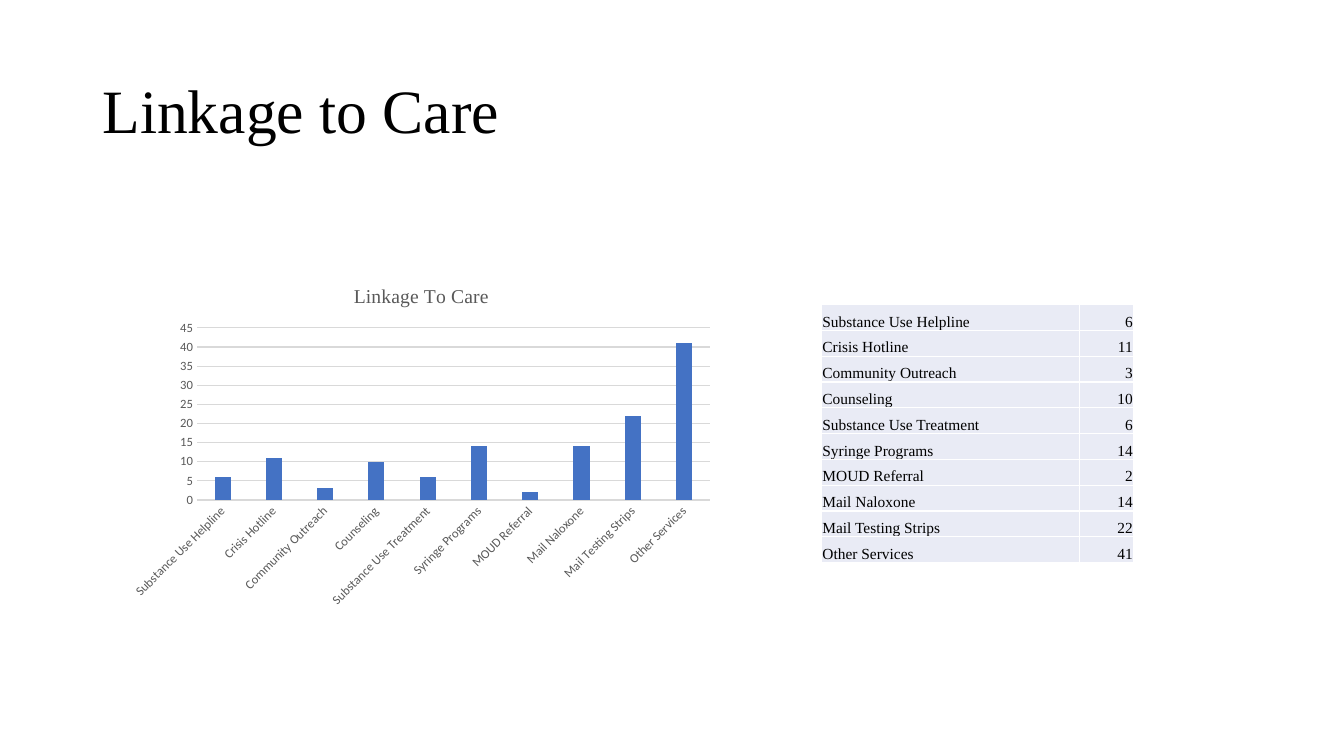
from lxml.etree import SubElement
from pptx import Presentation
from pptx.chart.data import CategoryChartData
from pptx.dml.color import RGBColor
from pptx.enum.chart import XL_CHART_TYPE, XL_TICK_MARK
from pptx.enum.text import MSO_ANCHOR, PP_ALIGN
from pptx.oxml import parse_xml
from pptx.oxml.ns import nsdecls, qn
from pptx.util import Inches, Pt

BLACK = RGBColor(0x00, 0x00, 0x00)
WHITE = RGBColor(0xFF, 0xFF, 0xFF)
GRAY = RGBColor(0x59, 0x59, 0x59)
GRID_GRAY = RGBColor(0xD9, 0xD9, 0xD9)
BLUE = RGBColor(0x44, 0x72, 0xC4)
PALE_BLUE = RGBColor(0xE9, 0xEB, 0xF5)
SERIF = "Times New Roman"
SANS = "Calibri"
SLIDE_WIDTH, SLIDE_HEIGHT = Inches(13.33), Inches(7.5)
SERVICES = {
    "Substance Use Helpline": 6,
    "Crisis Hotline": 11,
    "Community Outreach": 3,
    "Counseling": 10,
    "Substance Use Treatment": 6,
    "Syringe Programs": 14,
    "MOUD Referral": 2,
    "Mail Naloxone": 14,
    "Mail Testing Strips": 22,
    "Other Services": 41,
}


def place(left, top, width, height):
    """Turn percentages of the slide's size into lengths."""
    return (int(SLIDE_WIDTH * left / 100), int(SLIDE_HEIGHT * top / 100),
            int(SLIDE_WIDTH * width / 100), int(SLIDE_HEIGHT * height / 100))


def apply_format(target, values):
    """Set each attribute named in a dict."""
    for name, value in values.items():
        setattr(target, name, value)


def format_font(font, name, size, color):
    """Set typeface, size and colour of a font."""
    apply_format(font, {"name": name, "size": Pt(size), "bold": False})
    font.color.rgb = color


def format_line(line, color):
    """Give a chart line its colour and hairline width."""
    line.color.rgb = color
    line.width = Pt(0.75)


def set_layout(parent, index, modes, percentages):
    """Place a chart element by percentages of the chart's size."""
    for old in parent.findall(qn("c:layout")):
        parent.remove(old)
    layout = parse_xml(f"<c:layout {nsdecls('c')}><c:manualLayout/></c:layout>")
    shares = {name: value / 100 for name, value in percentages.items()}
    for name, value in {**modes, **shares}.items():
        SubElement(layout[0], qn(f"c:{name}")).set("val", str(value))
    parent.insert(index, layout)


def add_title(slide, text, box):
    """Fill and format the title placeholder."""
    title = slide.shapes.title
    apply_format(title, dict(zip(("left", "top", "width", "height"), box)))
    frame = title.text_frame
    apply_format(frame, {"text": text, "vertical_anchor": MSO_ANCHOR.MIDDLE,
                         "word_wrap": True})
    paragraph = frame.paragraphs[0]
    apply_format(paragraph, {"alignment": PP_ALIGN.LEFT, "line_spacing": 0.9})
    format_font(paragraph.runs[0].font, SERIF, 44, BLACK)


def format_chart_title(chart, text):
    """Write the chart's heading."""
    title = chart.chart_title
    title.text_frame.text = text
    format_font(title.text_frame.paragraphs[0].runs[0].font, SERIF, 14, GRAY)
    set_layout(title._element, 1, {"xMode": "edge", "yMode": "edge"},
               {"x": 38.15, "y": 3.6})


def format_axes(chart):
    """Style both axes, the gridlines and the slanted category labels."""
    category_axis, value_axis = chart.category_axis, chart.value_axis
    for axis in (category_axis, value_axis):
        apply_format(axis, {"major_tick_mark": XL_TICK_MARK.NONE,
                            "minor_tick_mark": XL_TICK_MARK.NONE})
        format_font(axis.tick_labels.font, SANS, 9, GRAY)
    format_line(category_axis.format.line, GRID_GRAY)
    category_axis._element.txPr.bodyPr.set("rot", "-2700000")
    apply_format(value_axis, {"minimum_scale": 0, "maximum_scale": 45,
                              "major_unit": 5, "has_major_gridlines": True})
    format_line(value_axis.major_gridlines.format.line, GRID_GRAY)
    value_axis.format.line.fill.background()


def add_column_chart(slide, heading, values, box):
    """Add the column chart of all services."""
    data = CategoryChartData()
    data.categories = list(values)
    data.add_series("Series 1", list(values.values()))
    chart = slide.shapes.add_chart(XL_CHART_TYPE.COLUMN_CLUSTERED, *box, data).chart
    apply_format(chart, {"has_legend": False, "has_title": True})
    format_font(chart.font, SANS, 10, BLACK)
    format_chart_title(chart, heading)
    format_axes(chart)
    plot = chart.plots[0]
    apply_format(plot, {"gap_width": 219, "overlap": -27, "vary_by_categories": False})
    fill = plot.series[0].format.fill
    fill.solid()
    fill.fore_color.rgb = BLUE
    set_layout(chart._chartSpace.chart.plotArea, 0,
               {"layoutTarget": "inner", "xMode": "edge", "yMode": "edge"},
               {"x": 12.65, "y": 17.55, "w": 85.35, "h": 49.65})


def add_borders(cell):
    """Draw thin white borders round a cell."""
    properties = cell._tc.get_or_add_tcPr()
    for index, side in enumerate(("lnL", "lnR", "lnT", "lnB")):
        properties.insert(index, parse_xml(
            f'<a:{side} {nsdecls("a")} w="12700"><a:solidFill>'
            f'<a:srgbClr val="{WHITE}"/></a:solidFill></a:{side}>'))


def fill_cell(cell, text, alignment):
    """Write and format one table cell."""
    apply_format(cell, {"text": text, "vertical_anchor": MSO_ANCHOR.BOTTOM,
                        "margin_left": Pt(0.5), "margin_right": Pt(0.5),
                        "margin_top": Pt(0.5), "margin_bottom": 0})
    cell.fill.solid()
    cell.fill.fore_color.rgb = PALE_BLUE
    paragraph = cell.text_frame.paragraphs[0]
    paragraph.alignment = alignment
    format_font(paragraph.runs[0].font, SERIF, 11, BLACK)
    add_borders(cell)


def add_service_table(slide, values, box):
    """Add the table of services and their counts."""
    table = slide.shapes.add_table(len(values), 2, *box).table
    apply_format(table, {"first_row": False, "horz_banding": False})
    for column, percentage in zip(table.columns, (82.7, 17.3)):
        column.width = int(box[2] * percentage / 100)
    for row, (service, count) in zip(table.rows, values.items()):
        row.height = box[3] // len(values)
        fill_cell(row.cells[0], service, PP_ALIGN.LEFT)
        fill_cell(row.cells[1], str(count), PP_ALIGN.RIGHT)


def main():
    """Build and save the slide."""
    presentation = Presentation()
    apply_format(presentation, {"slide_width": SLIDE_WIDTH, "slide_height": SLIDE_HEIGHT})
    slide = presentation.slides.add_slide(presentation.slide_layouts[5])
    add_title(slide, "Linkage to Care", place(6.88, 5.33, 86.27, 19.33))
    add_service_table(slide, SERVICES, place(61.14, 40.3, 23.2, 34.13))
    add_column_chart(slide, "Linkage To Care", SERVICES, place(9, 35.33, 44.71, 45.87))
    presentation.save("out.pptx")


if __name__ == "__main__":
    main()
